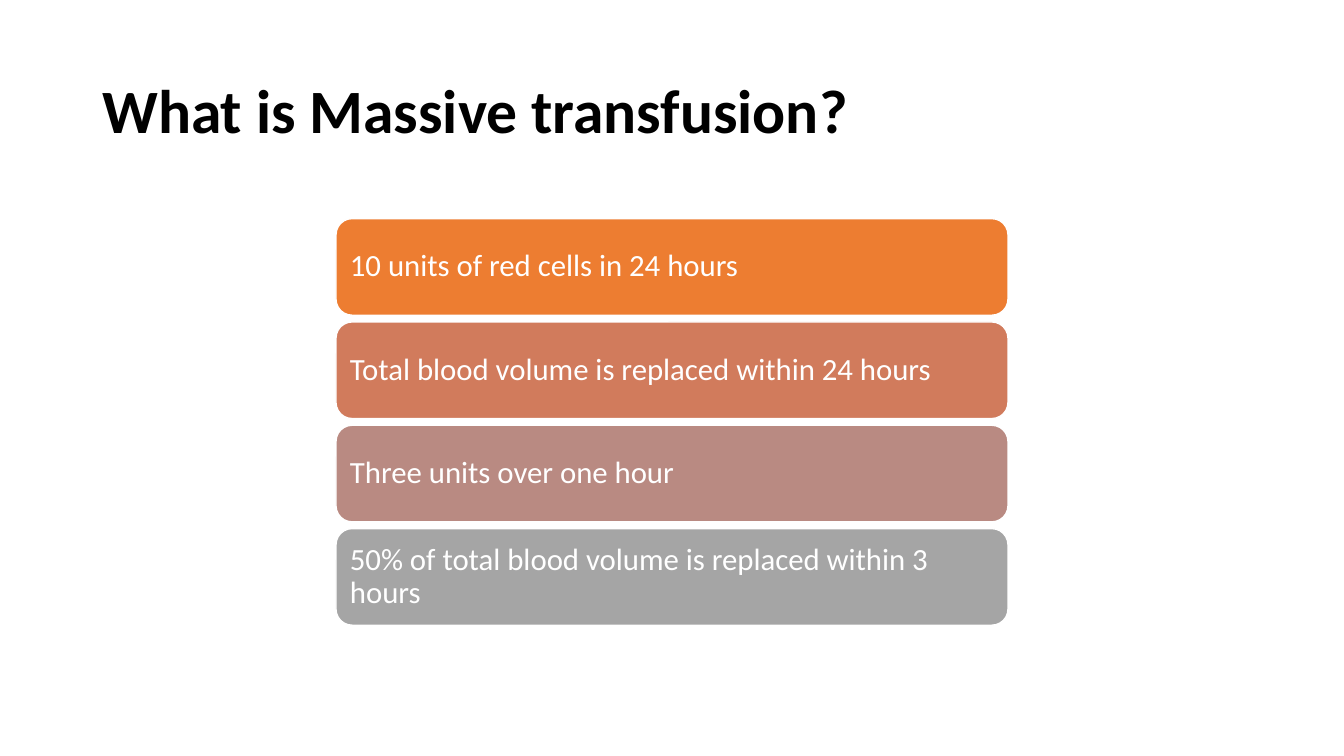
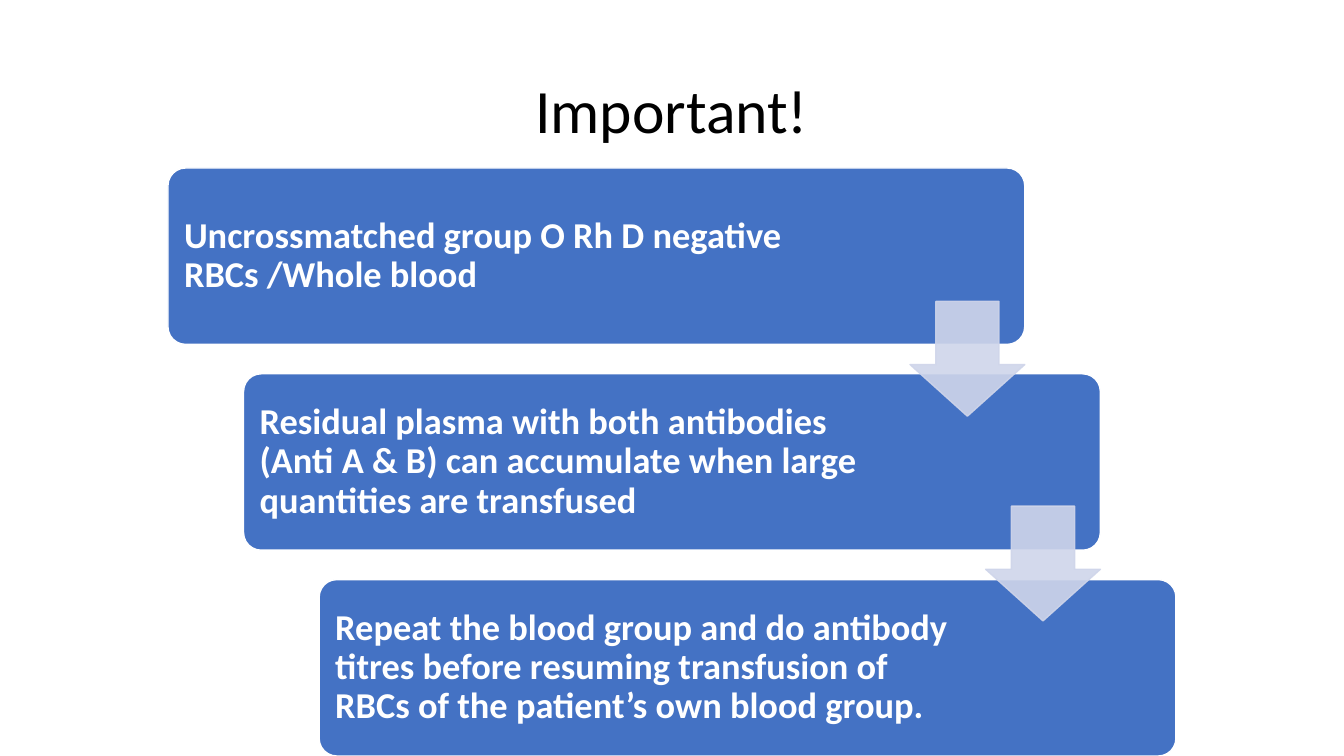
from lxml import etree
from pptx import Presentation
from pptx.dml.color import RGBColor
from pptx.enum.shapes import MSO_SHAPE as Shape
from pptx.enum.text import MSO_ANCHOR as Anchor, PP_ALIGN as Align
from pptx.oxml.ns import qn
from pptx.util import Pt

# Shared style
FONT = "Calibri"
BLACK = RGBColor(0x00, 0x00, 0x00)
WHITE = RGBColor(0xFF, 0xFF, 0xFF)
BLUE = RGBColor(0x44, 0x72, 0xC4)
PALE_BLUE = RGBColor(0xCF, 0xD5, 0xEA)
ORANGE = RGBColor(0xED, 0x7D, 0x31)
TERRACOTTA = RGBColor(0xD1, 0x7B, 0x5C)
DUSTY_ROSE = RGBColor(0xB9, 0x8A, 0x82)
GRAY = RGBColor(0xA5, 0xA5, 0xA5)
TITLE_AREA = Pt(66), Pt(28.8), Pt(828), Pt(104.4)


def write(box, text, size=44, color=BLACK, bold=False, align=Align.LEFT,
          inset=7.2, right_inset=7.2):
    frame = box.text_frame
    frame.word_wrap = True
    frame.vertical_anchor = Anchor.MIDDLE
    frame.margin_left = frame.margin_top = frame.margin_bottom = Pt(inset)
    frame.margin_right = Pt(right_inset)
    para = frame.paragraphs[0]
    para.alignment = align
    para.line_spacing = 0.9
    span = para.add_run()
    span.text = text
    font = span.font
    font.name, font.size, font.bold = FONT, Pt(size), bold
    font.color.rgb = color


def add_block(page, kind, left, top, width, height, fill, line):
    block = page.shapes.add_shape(kind, Pt(left), Pt(top), Pt(width), Pt(height))
    block.shadow.inherit = False
    block.fill.solid()
    block.fill.fore_color.rgb = fill
    block.line.color.rgb = line
    block.line.width = Pt(1)
    return block


deck = Presentation()
deck.slide_width, deck.slide_height = Pt(960), Pt(540)
blank = deck.slide_layouts[6]

# Slide 1: definitions as a stack of bars
page = deck.slides.add_slide(blank)
write(page.shapes.add_textbox(*TITLE_AREA), "What is Massive transfusion?", bold=True)

definitions = [
    ("10 units of red cells in 24 hours", ORANGE),
    ("Total blood volume is replaced within 24 hours", TERRACOTTA),
    ("Three units over one hour", DUSTY_ROSE),
    ("50% of total blood volume is replaced within 3 hours", GRAY),
]
for row, (text, fill) in enumerate(definitions):
    bar = add_block(page, Shape.ROUNDED_RECTANGLE, 240, 156.2 + 73.8 * row,
                    480, 69, fill, WHITE)
    write(bar, text, size=22, color=WHITE, inset=6.6, right_inset=6.6)

# Slide 2: descending steps
page = deck.slides.add_slide(blank)
write(page.shapes.add_textbox(*TITLE_AREA), "Important!", align=Align.CENTER)

steps = [
    "Uncrossmatched group O Rh D negative RBCs /Whole blood",
    "Residual plasma with both antibodies (Anti A & B) can accumulate when "
    "large quantities are transfused",
    "Repeat the blood group and do antibody titres before resuming transfusion "
    "of RBCs of the patient’s own blood group.",
]
STEP_SHIFT = 54
for row, text in enumerate(steps):
    step = add_block(page, Shape.ROUNDED_RECTANGLE, 120 + STEP_SHIFT * row,
                     120 + 147 * row, 612, 126, BLUE, WHITE)
    step.adjustments[0] = 0.1
    write(step, text, size=26, color=WHITE, bold=True, inset=7.8, right_inset=144)

# Translucent arrows between the steps
for row in range(len(steps) - 1):
    arrow = add_block(page, Shape.DOWN_ARROW, 650 + STEP_SHIFT * row,
                      215.3 + 146.2 * row, 82, 82, PALE_BLUE, PALE_BLUE)
    arrow.adjustments[0] = 0.55
    arrow.adjustments[1] = 0.45
    for color in arrow.element.spPr.iter(qn("a:srgbClr")):
        etree.SubElement(color, qn("a:alpha"), val="90000")

deck.save("out.pptx")
